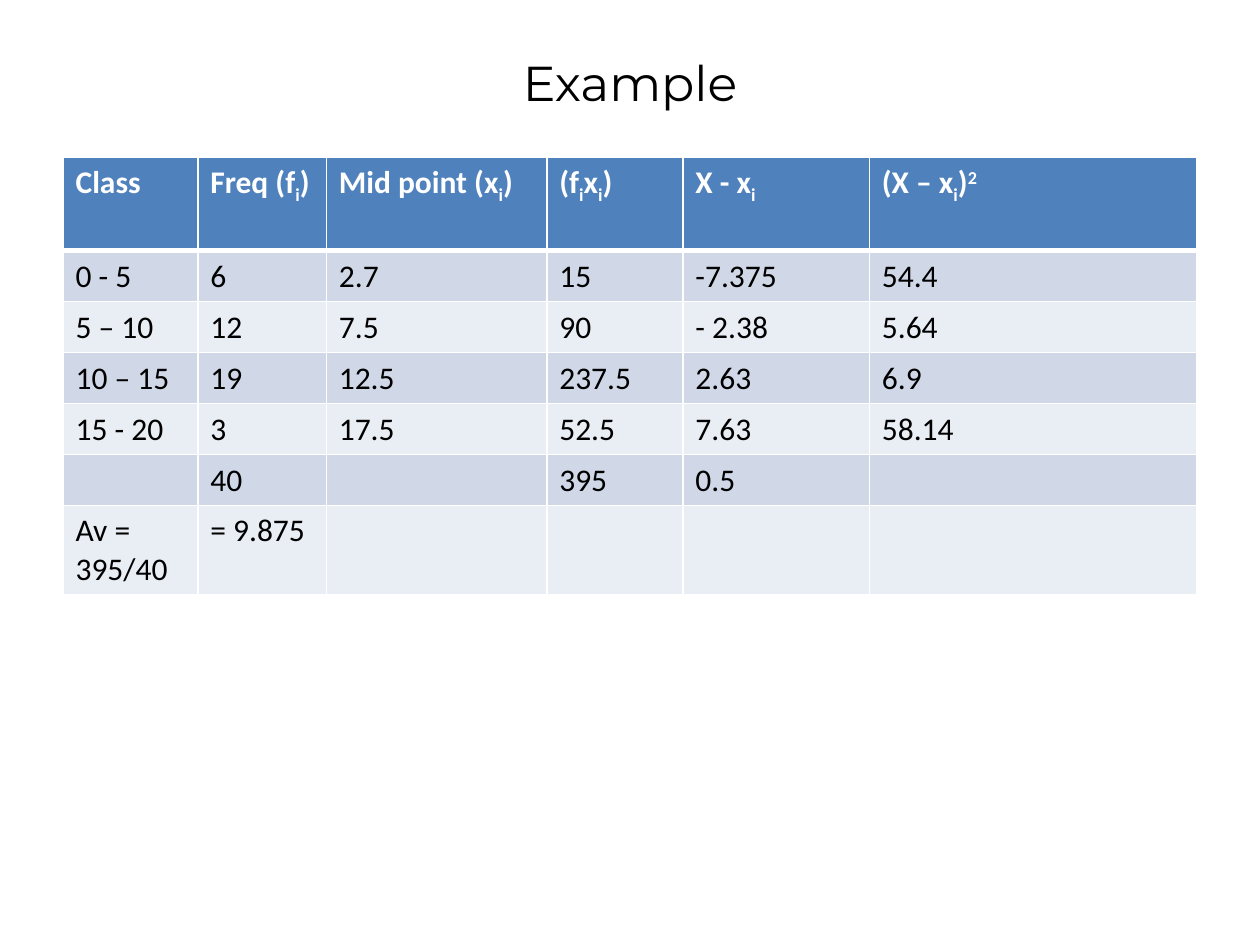
from dataclasses import dataclass

from lxml.etree import SubElement
from pptx import Presentation
from pptx.dml.color import RGBColor
from pptx.enum.text import MSO_ANCHOR, PP_ALIGN
from pptx.oxml.ns import qn
from pptx.table import Table, _Cell as Cell
from pptx.util import Inches, Pt

COLORS = {
    "header": "4F81BD",
    "odd": "D0D8E8",
    "even": "E9EDF4",
    "border": "FFFFFF",
    "header_text": "FFFFFF",
    "text": "000000",
}
BASELINES = {"_": -25000, "^": 30000}  # marks the next character as sub- or superscript
COLUMN_WIDTHS = (1.07, 1.02, 1.75, 1.08, 1.48, 2.6)
ROW_HEIGHTS = (0.74, *[0.405] * 5, 0.71)
ROWS = (
    ("Class", "Freq (f_i)", "Mid point (x_i)", "(f_ix_i)", "X - x_i", "(X – x_i)^2"),
    ("0 - 5", "6", "2.7", "15", "-7.375", "54.4"),
    ("5 – 10", "12", "7.5", "90", "- 2.38", "5.64"),
    ("10 – 15", "19", "12.5", "237.5", "2.63", "6.9"),
    ("15 - 20", "3", "17.5", "52.5", "7.63", "58.14"),
    ("", "40", "", "395", "0.5", ""),
    ("Av = 395/40", "= 9.875", "", "", "", ""),
)


@dataclass(frozen=True)
class CellStyle:
    fill: str
    text: str
    bold: bool
    top: float
    bottom: float


def row_style(row: int) -> CellStyle:
    if row == 0:
        return CellStyle("header", "header_text", True, 1, 3)
    return CellStyle("odd" if row % 2 else "even", "text", False, 3 if row == 1 else 1, 1)


def split_runs(markup: str) -> list[tuple[str, int]]:
    """Split marked-up text into (text, baseline) pairs."""
    runs, plain = [], ""
    characters = iter(markup)
    for character in characters:
        if character in BASELINES:
            runs += [(plain, 0), (next(characters), BASELINES[character])]
            plain = ""
        else:
            plain += character
    return [run for run in [*runs, (plain, 0)] if run[0]]


def add_border(cell: Cell, side: str, width: float) -> None:
    properties = cell._tc.get_or_add_tcPr()
    line = SubElement(properties, qn(f"a:ln{side}"), w=str(Pt(width)))
    fill = SubElement(line, qn("a:solidFill"))
    SubElement(fill, qn("a:srgbClr"), val=COLORS["border"])


def write_cell(cell: Cell, markup: str, style: CellStyle) -> None:
    for side, width in (("L", 1), ("R", 1), ("T", style.top), ("B", style.bottom)):
        add_border(cell, side, width)
    cell.fill.solid()
    cell.fill.fore_color.rgb = RGBColor.from_string(COLORS[style.fill])
    paragraph = cell.text_frame.paragraphs[0]
    paragraph.font.size = Pt(18)
    for text, baseline in split_runs(markup):
        run = paragraph.add_run()
        run.text = text
        run.font.name = "Calibri"
        run.font.size = Pt(18)
        run.font.bold = style.bold
        run.font.color.rgb = RGBColor.from_string(COLORS[style.text])
        if baseline:
            run.font._element.set("baseline", str(baseline))


def fill_table(table: Table) -> None:
    for column, width in zip(table.columns, COLUMN_WIDTHS):
        column.width = Inches(width)
    for index, (row, height, values) in enumerate(zip(table.rows, ROW_HEIGHTS, ROWS)):
        row.height = Inches(height)
        for cell, markup in zip(row.cells, values):
            write_cell(cell, markup, row_style(index))


def add_title(slide, text: str, left: int, top: int, width: int, height: int) -> None:
    text_frame = slide.shapes.add_textbox(left, top, width, height).text_frame
    text_frame.word_wrap = True
    text_frame.vertical_anchor = MSO_ANCHOR.MIDDLE
    text_frame.text = text
    paragraph = text_frame.paragraphs[0]
    paragraph.alignment = PP_ALIGN.CENTER
    font = paragraph.runs[0].font
    font.name = "Montserrat"
    font.size = Pt(28)
    font.color.rgb = RGBColor.from_string(COLORS["text"])


def main() -> None:
    presentation = Presentation()
    presentation.slide_width, presentation.slide_height = Inches(10), Inches(7.5)
    slide = presentation.slides.add_slide(presentation.slide_layouts[6])
    margin = int(presentation.slide_width * 0.05)
    width = presentation.slide_width - 2 * margin
    add_title(slide, "Example", margin, Inches(0.3), width, Inches(0.7))
    frame = slide.shapes.add_table(
        len(ROWS), len(COLUMN_WIDTHS), margin, Inches(1.25), width, Inches(sum(ROW_HEIGHTS))
    )
    fill_table(frame.table)
    presentation.save("out.pptx")


if __name__ == "__main__":
    main()
